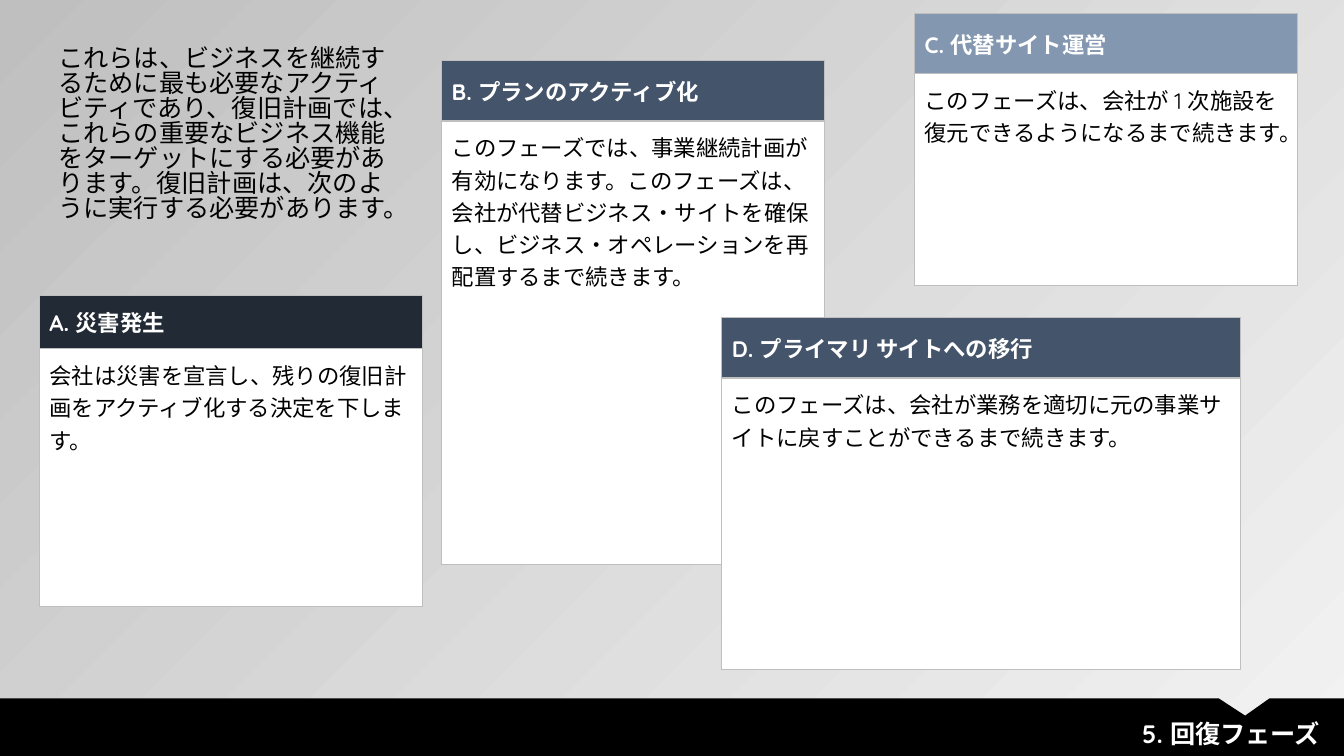
from lxml import etree
from pptx import Presentation
from pptx.dml.color import RGBColor
from pptx.enum.text import MSO_ANCHOR, PP_ALIGN
from pptx.oxml.ns import qn
from pptx.util import Pt

TOP, MIDDLE = MSO_ANCHOR.TOP, MSO_ANCHOR.MIDDLE
LEFT, RIGHT = PP_ALIGN.LEFT, PP_ALIGN.RIGHT
PX = 9144  # 100 px to the inch

THEME = {
    "font": "Quicksand", "text_size": 18, "card_size": 16,
    "white": "FFFFFF", "black": "000000", "border": "BFBFBF",
    "navy": "222A35", "slate": "44546A", "steel": "8497B0",
    "light": "F2F2F2", "grey": "BFBFBF",
}


def write(frame, text, size, color, bold=False, align=LEFT):
    para = frame.paragraphs[0]
    para.alignment = align
    span = para.add_run()
    span.text = text
    span.font.color.rgb = RGBColor.from_string(THEME[color])
    formats = {"name": THEME["font"], "size": Pt(THEME[size]), "bold": bold}
    for name, value in formats.items():
        setattr(span.font, name, value)
    return para


def outline(cell):
    properties = cell._tc.get_or_add_tcPr()
    for side in ("lnL", "lnR", "lnT", "lnB"):
        line = etree.SubElement(properties, qn(f"a:{side}"), w=str(Pt(1)))
        fill = etree.SubElement(line, qn("a:solidFill"))
        etree.SubElement(fill, qn("a:srgbClr"), val=THEME["border"])


deck = Presentation()
deck.slide_width, deck.slide_height = 1333 * PX, 750 * PX
page = deck.slides.add_slide(deck.slide_layouts[6])

# Background: dark top left to light bottom right
backdrop = page.background.fill
backdrop.gradient()
backdrop.gradient_angle = 135
for stop, color in zip(backdrop.gradient_stops, ("light", "grey")):
    stop.color.rgb = RGBColor.from_string(THEME[color])

# Phase cards: left, top, width, header height, body height, colour, texts
CARDS = [
    (907, 13, 380, 60, 210, "steel", "C. 代替サイト運営",
     "このフェーズは、会社が 1 次施設を復元できるようになるまで続きます。"),
    (438, 60, 380, 60, 440, "slate", "B. プランのアクティブ化",
     "このフェーズでは、事業継続計画が有効になります。このフェーズは、"
     "会社が代替ビジネス・サイトを確保し、ビジネス・オペレーションを再配置するまで続きます。"),
    (716, 315, 514, 60, 289, "slate", "D. プライマリ サイトへの移行",
     "このフェーズは、会社が業務を適切に元の事業サイトに戻すことができるまで続きます。"),
    (39, 293, 380, 53, 256, "navy", "A. 災害発生",
     "会社は災害を宣言し、残りの復旧計画をアクティブ化する決定を下します。"),
]
for left, top, width, head, body, color, title, detail in CARDS:
    place = [value * PX for value in (left, top, width, head + body)]
    table = page.shapes.add_table(2, 1, *place).table
    rows = [(head, title, color, "white", True, MIDDLE),
            (body, detail, "white", "black", False, TOP)]
    for index, (height, text, fill, ink, bold, anchor) in enumerate(rows):
        table.rows[index].height = height * PX
        cell = table.cell(index, 0)
        outline(cell)
        cell.fill.solid()
        cell.fill.fore_color.rgb = RGBColor.from_string(THEME[fill])
        cell.vertical_anchor = anchor
        for side in ("left", "right", "top", "bottom"):
            setattr(cell, f"margin_{side}", 10 * PX)
        write(cell.text_frame, text, "card_size", ink, bold)

# Footer band with a notch
builder = page.shapes.build_freeform(0, 693, scale=PX)
builder.add_line_segments([(1209, 693), (1235, 710), (1259, 693),
                           (1333, 693), (1333, 750), (0, 750)], close=True)
band = builder.convert_to_shape()
band.shadow.inherit = False
band.fill.solid()
band.fill.fore_color.rgb = RGBColor.from_string(THEME["black"])
band.line.fill.background()

# Footer title and introduction
TEXTS = [
    ((24, 708, 1295, 42), "5. 回復フェーズ", "white", True, RIGHT, 1.0),
    ((48, 42, 363, 222),
     "これらは、ビジネスを継続するために最も必要なアクティビティであり、復旧計画では、"
     "これらの重要なビジネス機能をターゲットにする必要があります。"
     "復旧計画は、次のように実行する必要があります。",
     "black", False, LEFT, 0.83),
]
for place, text, color, bold, align, spacing in TEXTS:
    box = page.shapes.add_textbox(*[value * PX for value in place])
    box.text_frame.word_wrap = True
    para = write(box.text_frame, text, "text_size", color, bold, align)
    para.line_spacing = spacing

deck.save("out.pptx")
